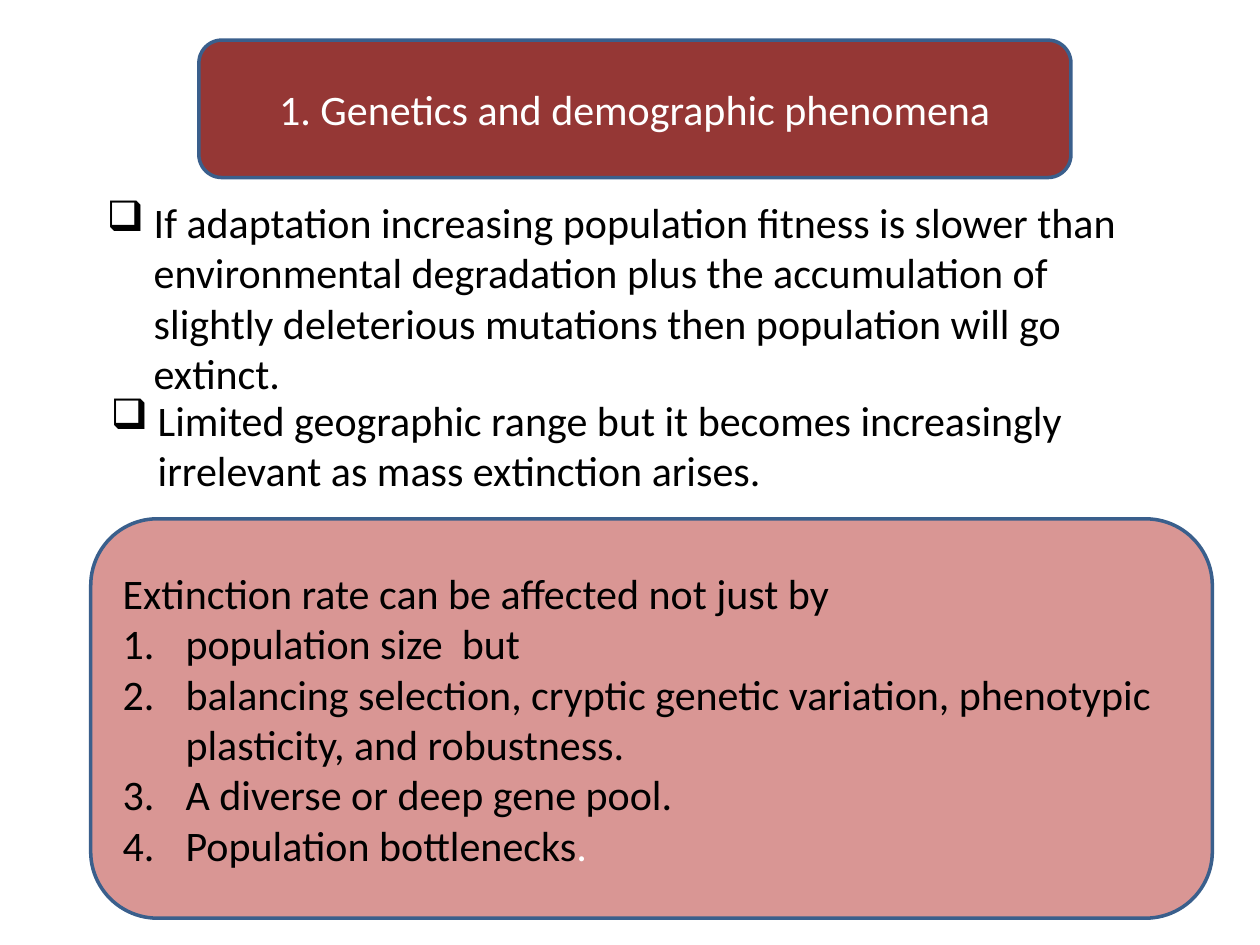
from lxml import etree
from pptx import Presentation
from pptx import util as u
from pptx.dml.color import RGBColor
from pptx.enum import shapes, text
from pptx.oxml.ns import qn

BLACK = RGBColor(0x00, 0x00, 0x00)
WHITE = RGBColor(0xFF, 0xFF, 0xFF)
DARK_RED = RGBColor(0x95, 0x37, 0x35)
ROSE = RGBColor(0xD9, 0x96, 0x94)
BLUE = RGBColor(0x3A, 0x5F, 0x8C)

CHECKBOX = ("buChar", {"char": "❑"}, 0.95)
NUMBER = ("buAutoNum", {"type": "arabicPeriod"}, 1.27)

TITLE = [(None, [("1. Genetics and demographic phenomena", WHITE)])]
CAUSES = [
    ((1.9, 3.07, 20.96, 5.13), 0.89,
     "If adaptation increasing population fitness is slower than environmental degradation "
     "plus the accumulation of slightly deleterious mutations then population will go extinct."),
    ((1.98, 7.82, 20.07, 2.31), 0.13,
     "Limited geographic range but it becomes increasingly irrelevant as mass extinction arises."),
]
FACTORS = [
    (None, [("Extinction rate can be affected not just by", BLACK)]),
    (NUMBER, [("population size  but", BLACK)]),
    (NUMBER, [("balancing selection, cryptic genetic variation, phenotypic plasticity, "
               "and robustness.", BLACK)]),
    (NUMBER, [("A diverse or deep gene pool.", BLACK)]),
    (NUMBER, [("Population bottlenecks", BLACK), (".", WHITE)]),
]
PANELS = [
    (shapes.MSO_SHAPE.ROUNDED_RECTANGLE, (4.01, 0.81, 17.58, 2.77), DARK_RED,
     text.PP_ALIGN.CENTER, TITLE),
    (shapes.MSO_SHAPE.FLOWCHART_ALTERNATE_PROCESS, (1.83, 10.46, 22.61, 8.05), ROSE,
     text.PP_ALIGN.LEFT, FACTORS),
]


def place(box):
    return [u.Cm(length) for length in box]


def add_bullet(paragraph, bullet):
    tag, attributes, indent = bullet
    properties = paragraph._p.get_or_add_pPr()
    properties.set("marL", str(u.Cm(indent)))
    properties.set("indent", str(-u.Cm(indent)))
    etree.SubElement(properties, qn("a:" + tag), attributes)


def write(frame, paragraphs, alignment):
    frame.word_wrap = True
    for index, (bullet, runs) in enumerate(paragraphs):
        paragraph = frame.add_paragraph() if index else frame.paragraphs[0]
        paragraph.alignment = alignment
        if bullet:
            add_bullet(paragraph, bullet)
        for wording, color in runs:
            run = paragraph.add_run()
            run.text = wording
            run.font.name = "Calibri"
            run.font.size = u.Pt(24)
            run.font.color.rgb = color


def add_panel(slide, kind, box, fill, alignment, paragraphs):
    shape = slide.shapes.add_shape(kind, *place(box))
    shape.shadow.inherit = False
    shape.fill.solid()
    shape.fill.fore_color.rgb = fill
    shape.line.color.rgb = BLUE
    shape.line.width = u.Pt(2)
    shape.text_frame.vertical_anchor = text.MSO_ANCHOR.MIDDLE
    write(shape.text_frame, paragraphs, alignment)


def add_cause(slide, box, margin_top, wording):
    frame = slide.shapes.add_textbox(*place(box)).text_frame
    frame.margin_top = u.Cm(margin_top)
    write(frame, [(CHECKBOX, [(wording, BLACK)])], text.PP_ALIGN.LEFT)


def main():
    presentation = Presentation()
    presentation.slide_width = u.Cm(25.4)
    presentation.slide_height = u.Cm(19.05)
    slide = presentation.slides.add_slide(presentation.slide_layouts[6])
    for cause in CAUSES:
        add_cause(slide, *cause)
    for panel in PANELS:
        add_panel(slide, *panel)
    presentation.save("out.pptx")


if __name__ == "__main__":
    main()
